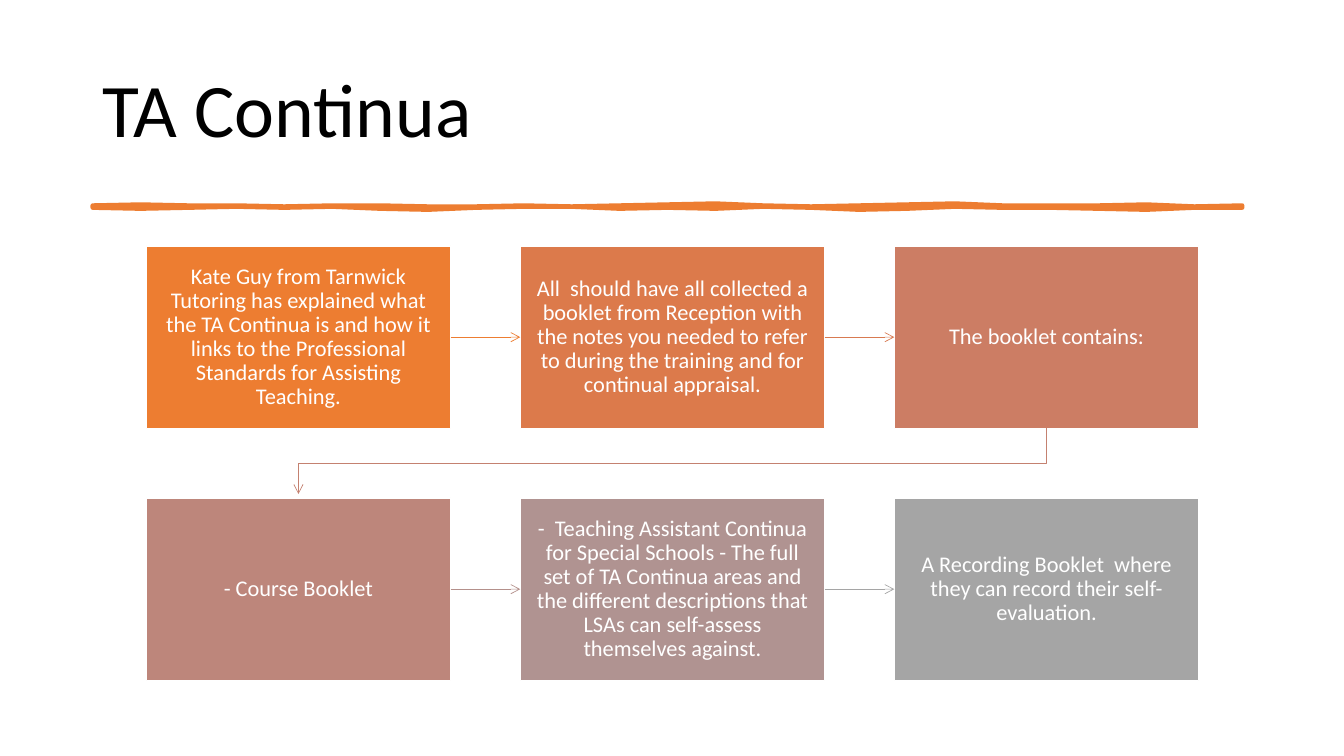
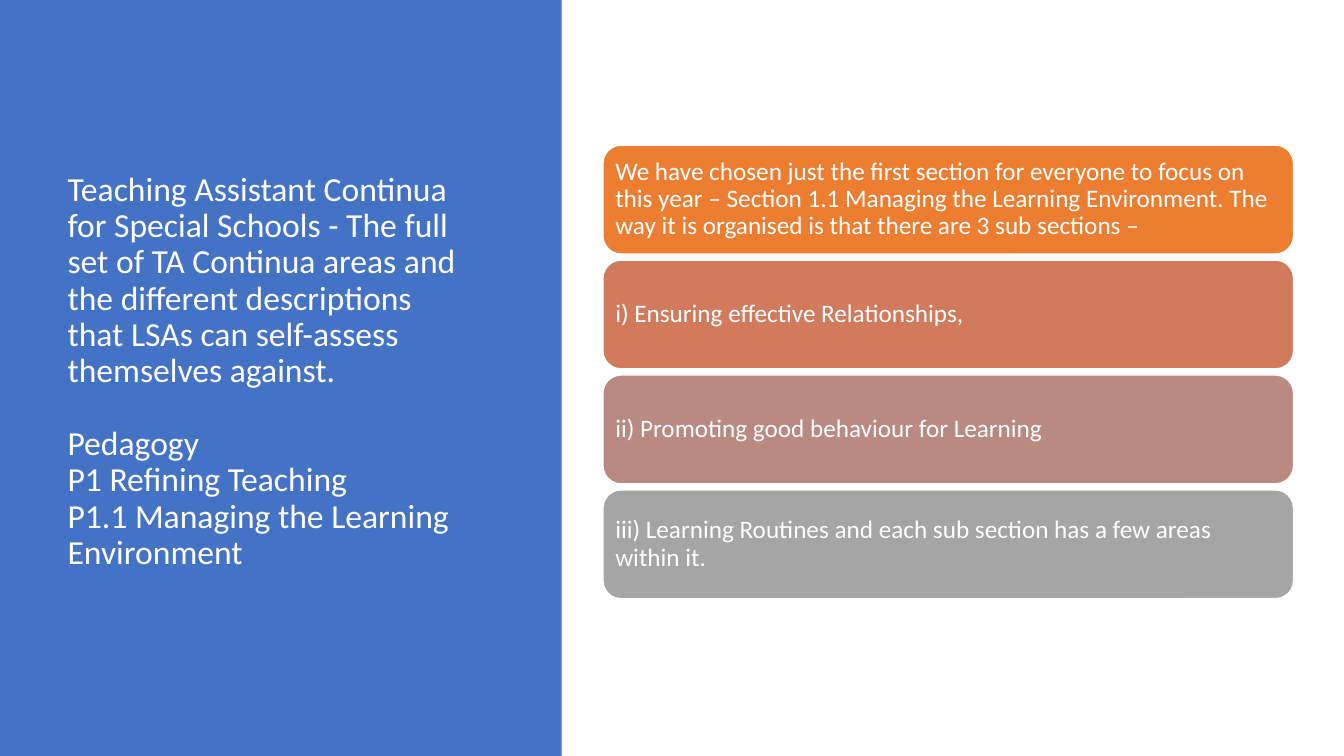
from dataclasses import dataclass

from lxml import etree
from pptx import Presentation, util as u
from pptx.dml.color import RGBColor
from pptx.enum import shapes, text
from pptx.oxml.ns import qn

WIDE, HIGH = 13.33, 7.5


@dataclass(frozen=True)
class Theme:
    font: str = "Calibri"
    black: str = "000000"
    white: str = "FFFFFF"
    blue: str = "4472C4"
    orange: str = "ED7D31"
    steps: tuple = ("ED7D31", "DC7A4B", "CC7D64", "BD867B", "B09391", "A5A5A5")
    links: tuple = ("ED7D31", "D87A51", "C48170", "B4908B", "A5A5A5")
    bars: tuple = ("ED7D31", "D17B5C", "B98A82", "A5A5A5")
    head: int = 54
    side: int = 24
    step: int = 16
    bar: int = 18
    thin: float = 0.5
    edge: float = 1
    rule: float = 3.25


LOOK = Theme()

STEPS = (
    "Kate Guy from Tarnwick Tutoring has explained what the TA Continua is and "
    "how it links to the Professional Standards for Assisting Teaching.",
    "All  should have all collected a booklet from Reception with the notes you "
    "needed to refer to during the training and for continual appraisal.",
    "The booklet contains:",
    "- Course Booklet",
    "-  Teaching Assistant Continua for Special Schools - The full set of TA "
    "Continua areas and the different descriptions that LSAs can self-assess "
    "themselves against.",
    "A Recording Booklet  where they can record their self-evaluation.",
)
SIDE = (
    "Teaching Assistant Continua for Special Schools - The full set of TA Continua "
    "areas and the different descriptions that LSAs can self-assess themselves "
    "against.\n"
    "Pedagogy\vP1 Refining Teaching\vP1.1 Managing the Learning Environment"
)
BARS = (
    "We have chosen just the first section for everyone to focus on this year – "
    "Section 1.1 Managing the Learning Environment. The way it is organised is that "
    "there are 3 sub sections –",
    "i) Ensuring effective Relationships,",
    "ii) Promoting good behaviour for Learning",
    "iii) Learning Routines and each sub section has a few areas within it.",
)

# Heights of the brush stroke's two edges, in hundredths of an inch
UPPER = (-1, -2, -1, -1, 0, -1, -1, 0, 0, -1, 0, -1, -2, -3, -1, 0, -1, -2, -3,
         -1, -1, -1, -2, 0, -1)
LOWER = (1, 2, 1, 0, 1, 0, 2, 3, 1, 0, 0, 2, 1, 2, 0, 1, 3, 2, 0, 1, 1, 2, 3, 1, 1)


def rgb(code):
    return RGBColor.from_string(code)


def apply(item, form):
    for name, value in form.items():
        setattr(item, name, value)


def write(shape, words, size, color, align, pad=(0.1, 0.05), gap=0):
    """Fill a shape with text; gap is the space between paragraphs."""
    frame = shape.text_frame
    frame.text = words
    across, down = map(u.Inches, pad)
    apply(frame, {
        "word_wrap": True,
        "auto_size": text.MSO_AUTO_SIZE.NONE,
        "vertical_anchor": text.MSO_ANCHOR.MIDDLE,
        "margin_left": across, "margin_right": across,
        "margin_top": down, "margin_bottom": down,
    })
    for rank, para in enumerate(frame.paragraphs):
        apply(para, {"alignment": align, "line_spacing": 0.9,
                     "space_before": u.Pt(gap if rank else 0)})
        for run in para.runs:
            apply(run.font, {"name": LOOK.font, "size": u.Pt(size)})
            run.font.color.rgb = rgb(color)


def paint(shape, fill=None, line=None, width=LOOK.edge):
    shape.shadow.inherit = False
    if fill:
        shape.fill.solid()
        shape.fill.fore_color.rgb = rgb(fill)
    else:
        shape.fill.background()
    if line:
        stroke(shape.line, line, width)
    else:
        shape.line.fill.background()


def stroke(line, color, width):
    line.color.rgb = rgb(color)
    line.width = u.Pt(width)


def point(line):
    """Put an open arrowhead on the far end of a line."""
    etree.SubElement(line._get_or_add_ln(), qn("a:tailEnd"), type="arrow")


def block(slide, kind, box, fill, line=None):
    shape = slide.shapes.add_shape(kind, *map(u.Inches, box))
    paint(shape, fill, line)
    return shape


def trace(slide, dots, close):
    """Draw an outline through points given in inches."""
    first, *rest = [(u.Inches(x), u.Inches(y)) for x, y in dots]
    pen = slide.shapes.build_freeform(*first)
    pen.add_line_segments(rest, close=close)
    return pen.convert_to_shape()


def link(slide, start, end, color):
    """Join the right side of one box to the left side of the next."""
    wire = slide.shapes.add_connector(shapes.MSO_CONNECTOR.STRAIGHT, 0, 0, 0, 0)
    wire.begin_connect(start, 3)
    wire.end_connect(end, 1)
    stroke(wire.line, color, LOOK.thin)
    point(wire.line)
    etree.SubElement(wire._element.spPr, qn("a:effectLst"))


def title(slide, words, box, size, color, gap=0):
    head = slide.shapes.title
    apply(head, dict(zip(("left", "top", "width", "height"), map(u.Inches, box))))
    write(head, words, size, color, text.PP_ALIGN.LEFT, gap=gap)


def brush(slide, left, mid, width):
    """Draw a hand-made rule of uneven thickness."""
    pitch = width / (len(UPPER) - 1)
    top, low = ([(left + i * pitch, mid + y / 100) for i, y in enumerate(edge)]
                for edge in (UPPER, LOWER))
    paint(trace(slide, top + low[::-1], True), LOOK.orange, LOOK.orange, LOOK.rule)


def flow(slide, left, top, cols=3):
    """Lay the steps out in rows, with an arrow from each to the next."""
    wide, high, across, down = 3.02, 1.81, 3.71, 2.5
    boxes = []
    for i, (words, fill) in enumerate(zip(STEPS, LOOK.steps)):
        row, col = divmod(i, cols)
        spot = (left + col * across, top + row * down, wide, high)
        box = block(slide, shapes.MSO_SHAPE.RECTANGLE, spot, fill, LOOK.white)
        write(box, words, LOOK.step, LOOK.white, text.PP_ALIGN.CENTER, (0.15, 0.16))
        boxes.append(box)
    for i, color in enumerate(LOOK.links):
        row, col = divmod(i, cols)
        if col < cols - 1:
            link(slide, boxes[i], boxes[i + 1], color)
            continue
        right, home = left + col * across + wide / 2, left + wide / 2
        foot, goal = top + row * down + high, top + (row + 1) * down
        turn = (foot + goal) / 2
        bend = trace(slide, [(right, foot), (right, turn), (home, turn),
                             (home, goal - 0.04)], False)
        paint(bend, line=color, width=LOOK.thin)
        point(bend.line)


def stack(slide, left, top, wide):
    high, pitch = 1.08, 1.14
    for i, (words, fill) in enumerate(zip(BARS, LOOK.bars)):
        bar = block(slide, shapes.MSO_SHAPE.ROUNDED_RECTANGLE,
                    (left, top + i * pitch, wide, high), fill, LOOK.white)
        write(bar, words, LOOK.bar, LOOK.white, text.PP_ALIGN.LEFT, (0.07, 0.07))


def panel(slide, wide):
    """Put a full-height colour panel behind the title."""
    back = block(slide, shapes.MSO_SHAPE.RECTANGLE, (0, 0, wide, HIGH), LOOK.blue)
    slide.shapes._spTree.insert(2, back._element)


def main():
    deck = Presentation()
    apply(deck, {"slide_width": u.Inches(WIDE), "slide_height": u.Inches(HIGH)})
    first, second = (deck.slides.add_slide(deck.slide_layouts[5]) for _ in range(2))

    title(first, "TA Continua", (0.92, 0.4, 11.5, 1.45), LOOK.head, LOOK.black)
    brush(first, 0.92, 2.05, 11.4)
    flow(first, 1.45, 2.44)

    panel(second, 5.57)
    title(second, SIDE, (0.57, 0.68, 4.16, 6.02), LOOK.side, LOOK.white, gap=26)
    stack(second, 5.98, 1.44, 6.85)

    deck.save("out.pptx")


if __name__ == "__main__":
    main()
